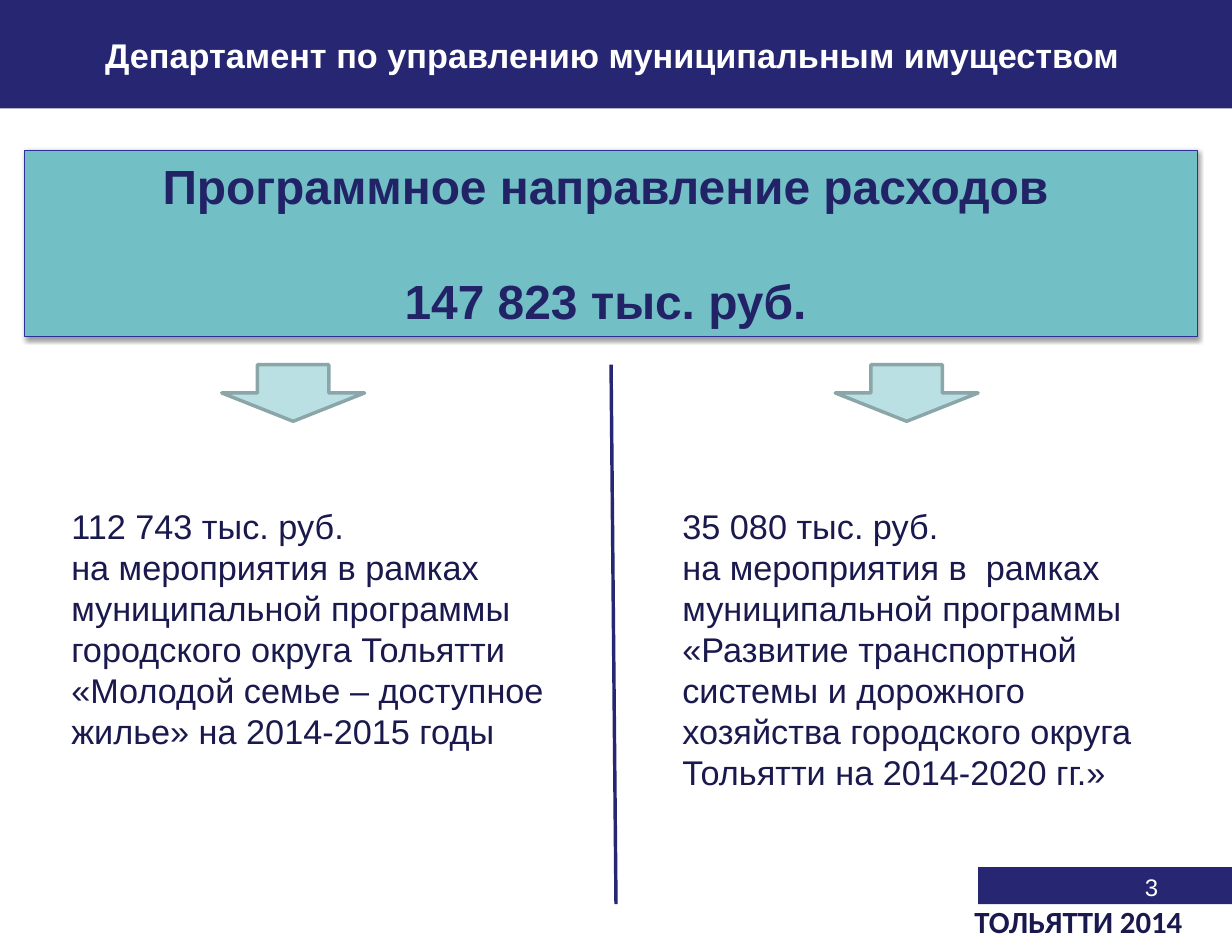
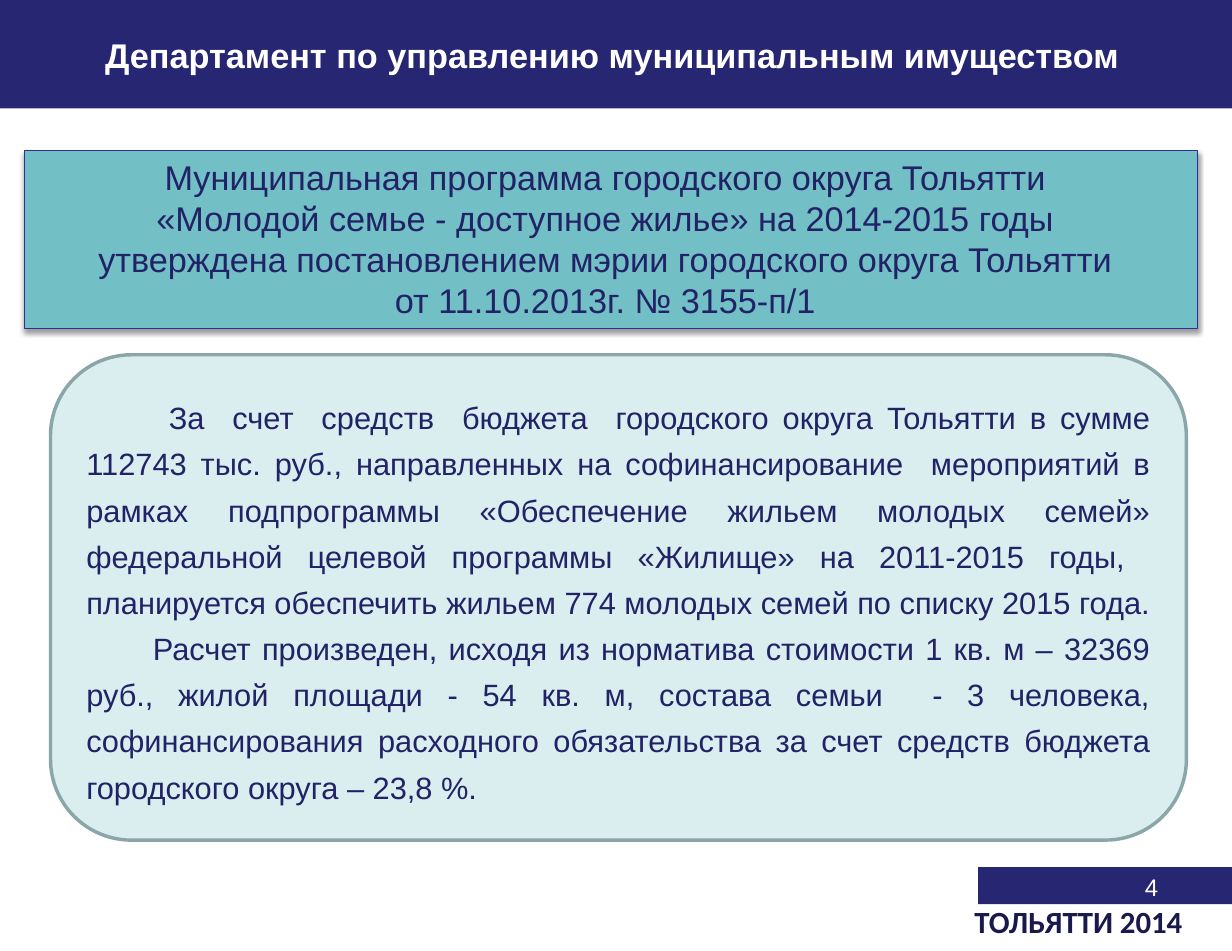
from lxml import etree
from pptx import Presentation
from pptx import util as u
from pptx.dml.color import RGBColor
from pptx.enum import shapes, text
from pptx.oxml.ns import qn

WIDE, HIGH = u.Inches(10), u.Inches(7.72)
HUES = {
    "navy": "262673", "ink": "19194D", "deep": "222267", "white": "FFFFFF",
    "teal": "72BFC5", "edge": "2F2F98", "aqua": "BBE0E3", "pale": "DAEDEF",
    "gray": "8AA6A8", "black": "000000",
}
KIND = shapes.MSO_SHAPE
ALIGN = text.PP_ALIGN
TITLE = "Департамент по управлению муниципальным имуществом"
MARK = "ТОЛЬЯТТИ 2014"
BANNER_TOP = 15.8
COLUMNS = [
    (4.8, 18, ["112 743 тыс. руб.",
               "на мероприятия в рамках муниципальной программы городского округа "
               "Тольятти «Молодой семье – доступное жилье» на 2014-2015 годы"]),
    (54.4, 67.8, ["35 080 тыс. руб.",
                  "на мероприятия в  рамках муниципальной программы «Развитие "
                  "транспортной системы и дорожного хозяйства городского округа "
                  "Тольятти на 2014-2020 гг.»"]),
]
DECREE = [
    "Муниципальная программа городского округа Тольятти",
    "«Молодой семье - доступное жилье» на 2014-2015 годы",
    "утверждена постановлением мэрии городского округа Тольятти",
    "от 11.10.2013г. № 3155-п/1",
]
DETAILS = [
    "За  счет  средств  бюджета  городского округа Тольятти в сумме 112743 тыс. руб., "
    "направленных на софинансирование  мероприятий в рамках подпрограммы «Обеспечение "
    "жильем молодых семей» федеральной целевой программы «Жилище» на 2011-2015 годы,  "
    "планируется обеспечить жильем 774 молодых семей по списку 2015 года.",
    "Расчет произведен, исходя из норматива стоимости 1 кв. м – 32369 руб., жилой "
    "площади - 54 кв. м, состава семьи  - 3 человека, софинансирования расходного "
    "обязательства за счет средств бюджета городского округа – 23,8 %.",
]


def hue(name):
    return RGBColor.from_string(HUES[name])


def place(x, y, w, h):
    return [int(WIDE * x / 100), int(HIGH * y / 100),
            int(WIDE * w / 100), int(HIGH * h / 100)]


def paint(shape, fill, line=None, weight=2):
    shape.fill.solid()
    shape.fill.fore_color.rgb = hue(fill)
    if line:
        shape.line.color.rgb = hue(line)
        shape.line.width = u.Pt(weight)
    else:
        shape.line.fill.background()


def write(shape, lines, size, color, bold=False, font="Arial", align=ALIGN.LEFT,
          anchor=text.MSO_ANCHOR.TOP, pitch=None, right=0.1):
    frame = shape.text_frame
    frame.text = "\n".join(lines)
    frame.word_wrap = True
    frame.vertical_anchor = anchor
    frame.margin_right = u.Inches(right)
    for para in frame.paragraphs:
        para.alignment = align
        if pitch:
            para.line_spacing = pitch
        for run in para.runs:
            run.font.size = u.Pt(size)
            run.font.name = font
            run.font.bold = bold
            run.font.color.rgb = hue(color)
    return frame


def add_block(slide, kind, area, fill, line=None, weight=2):
    shape = slide.shapes.add_shape(kind, *place(*area))
    shape.shadow.inherit = False
    paint(shape, fill, line, weight)
    return shape


def add_label(slide, area, lines, size, color, **style):
    label = slide.shapes.add_textbox(*place(*area))
    return write(label, lines, size, color, **style)


def add_shade(shape):
    effects = shape._element.spPr.find(qn("a:effectLst"))
    shade = etree.SubElement(effects, qn("a:outerShdw"), blurRad="40000",
                             dist="20000", dir="5400000", rotWithShape="0")
    color = etree.SubElement(shade, qn("a:srgbClr"), val=HUES["black"])
    etree.SubElement(color, qn("a:alpha"), val="38000")


def add_banner(slide, height, lines, size, bold=False):
    area = (2, BANNER_TOP, 95.2, height)
    banner = add_block(slide, KIND.RECTANGLE, area, "teal", "edge", 0.75)
    add_shade(banner)
    return write(banner, lines, size, "deep", bold=bold, align=ALIGN.CENTER, right=0.19)


def add_rule(slide, start, end):
    x, y, right, low = place(*start, *end)
    rule = slide.shapes.add_connector(shapes.MSO_CONNECTOR.STRAIGHT, x, y, right, low)
    rule.line.color.rgb = hue("navy")
    rule.line.width = u.Pt(2)
    etree.SubElement(rule._element.spPr, qn("a:effectLst"))


def add_page(deck, number):
    slide = deck.slides.add_slide(deck.slide_layouts[5])
    title = slide.shapes.title
    title.left, title.top, title.width, title.height = place(0, 0, 100, 11.4)
    paint(title, "navy")
    frame = write(title, [TITLE], 20, "white", bold=True, align=ALIGN.CENTER,
                  anchor=text.MSO_ANCHOR.MIDDLE, pitch=0.8, right=0.26)
    frame.margin_left, frame.margin_top = u.Inches(0.2), u.Inches(0.12)
    add_block(slide, KIND.RECTANGLE, (79.4, 91.19, 20.6, 3.89), "navy")
    add_label(slide, (71.7, 91.06, 23.3, 6.99), [str(number)], 14, "white",
              align=ALIGN.RIGHT)
    add_label(slide, (78.1, 95.08, 22.1, 4.53), [MARK], 18, "ink", bold=True,
              font="Calibri", pitch=0.8)
    return slide


def add_budget(deck):
    slide = add_page(deck, 3)
    frame = add_banner(slide, 19.56, ["Программное направление расходов",
                                      "147 823 тыс. руб."], 28, bold=True)
    frame.paragraphs[1].space_before = u.Pt(33.6)
    add_rule(slide, (49.6, 38.34), (50, 95.08))
    for left, arrow, lines in COLUMNS:
        add_block(slide, KIND.DOWN_ARROW, (arrow, 38.34, 11.6, 5.96), "aqua", "gray")
        add_label(slide, (left, 52.46, 40.5, 33.7), lines, 20, "ink")


def add_program(deck):
    slide = add_page(deck, 4)
    add_banner(slide, 18.78, DECREE, 20)
    panel = add_block(slide, KIND.ROUNDED_RECTANGLE, (4.1, 37.31, 92.2, 51.04),
                      "pale", "gray")
    frame = write(panel, DETAILS, 18, "deep", align=ALIGN.JUSTIFY,
                  anchor=text.MSO_ANCHOR.MIDDLE, pitch=1.25)
    for para, indent in zip(frame.paragraphs, (0.67, 0.54)):
        para._p.get_or_add_pPr().set("indent", str(u.Inches(indent)))


def main():
    deck = Presentation()
    deck.slide_width, deck.slide_height = WIDE, HIGH
    add_budget(deck)
    add_program(deck)
    deck.save("out.pptx")


if __name__ == "__main__":
    main()
